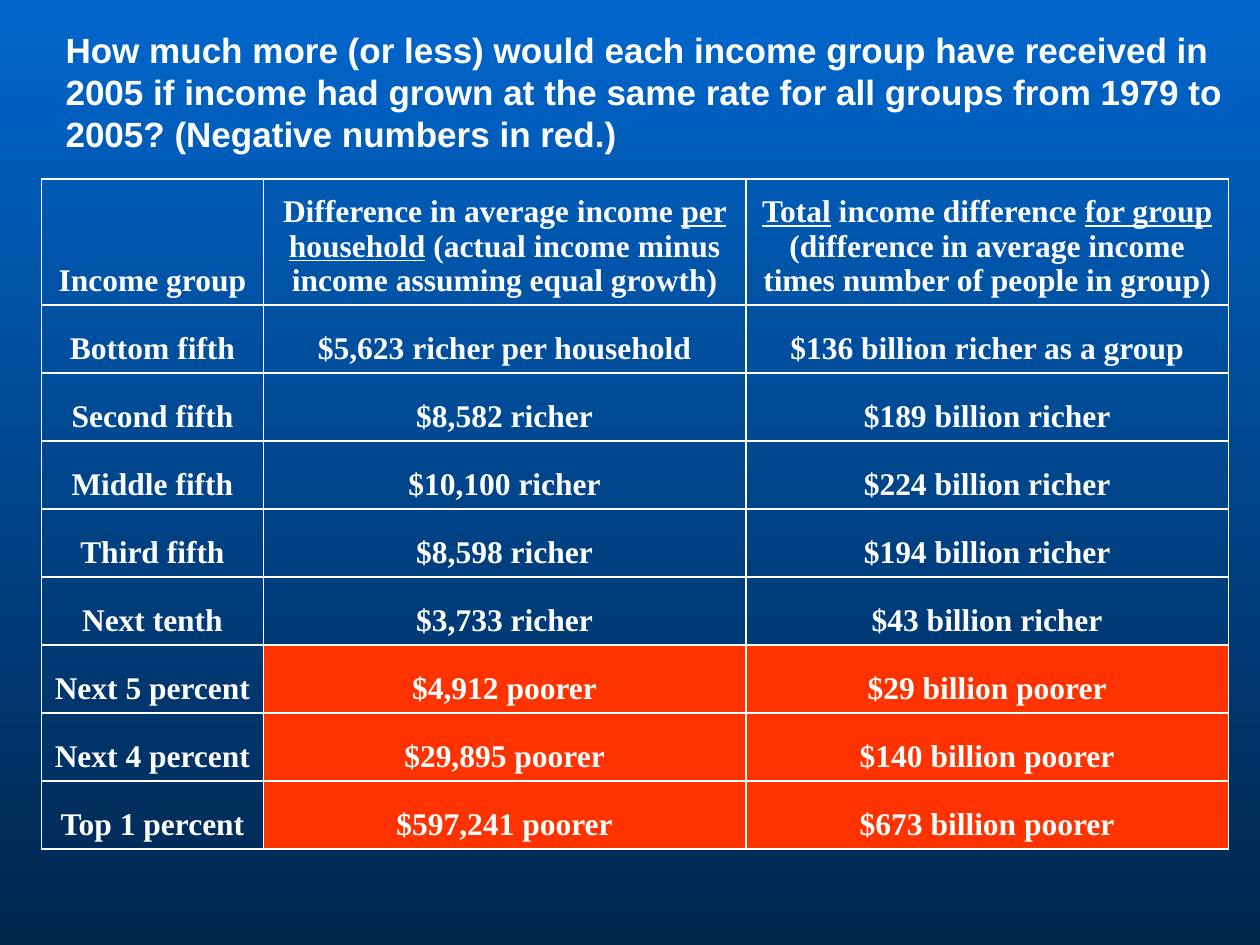
from lxml import etree
from pptx import Presentation
from pptx.dml.color import RGBColor
from pptx.enum.text import MSO_ANCHOR, PP_ALIGN
from pptx.oxml.ns import qn
from pptx.util import Inches, Pt

CENTER, LEFT = PP_ALIGN.CENTER, PP_ALIGN.LEFT
MIDDLE, BOTTOM = MSO_ANCHOR.MIDDLE, MSO_ANCHOR.BOTTOM

WHITE = RGBColor(0xFF, 0xFF, 0xFF)
RED = RGBColor(0xFF, 0x33, 0x00)
SKY = RGBColor(0x00, 0x66, 0xCC)
NAVY = RGBColor(0x00, 0x26, 0x4D)

TITLE_FORMAT = {"name": "Arial", "size": Pt(20), "bold": True}
CELL_FORMAT = {"name": "Times New Roman", "size": Pt(18), "bold": True}

TITLE = (
    "How much more (or less) would each income group have received in 2005 "
    "if income had grown at the same rate for all groups from 1979 to 2005? "
    "(Negative numbers in red.)"
)

# Each header is a list of paragraphs, each a list of (text, underlined) spans.
HEADERS = [
    [[("Income group", False)]],
    [[("Difference in average income ", False), ("per household", True),
      (" (actual income minus income assuming equal growth)", False)]],
    [[("Total", True), (" income difference ", False), ("for group", True)],
     [("(difference in average income times number of people in group)", False)]],
]
ROWS = [
    ("Bottom fifth", "$5,623 richer per household", "$136 billion richer as a group"),
    ("Second fifth", "$8,582 richer", "$189 billion richer"),
    ("Middle fifth", "$10,100 richer", "$224 billion richer"),
    ("Third fifth", "$8,598 richer", "$194 billion richer"),
    ("Next tenth", "$3,733 richer", "$43 billion richer"),
    ("Next 5 percent", "$4,912 poorer", "$29 billion poorer"),
    ("Next 4 percent", "$29,895 poorer", "$140 billion poorer"),
    ("Top 1 percent", "$597,241 poorer", "$673 billion poorer"),
]
COLUMN_WIDTHS = [1.76, 3.83, 3.83]
ROW_HEIGHTS = [1.0] + [0.54] * len(ROWS)


def add_span(para, text, font_format, underline=False):
    span = para.add_run()
    span.text = text
    for name, value in font_format.items():
        setattr(span.font, name, value)
    span.font.color.rgb = WHITE
    if underline:
        span.font.underline = True


def add_borders(cell):
    """Draw a thin white line on all four sides; lines must precede the fill."""
    properties = cell._tc.get_or_add_tcPr()
    for index, side in enumerate(("a:lnL", "a:lnR", "a:lnT", "a:lnB")):
        line = etree.Element(qn(side), w=str(Pt(1)))
        fill = etree.SubElement(line, qn("a:solidFill"))
        etree.SubElement(fill, qn("a:srgbClr"), val=str(WHITE))
        properties.insert(index, line)


deck = Presentation()
deck.slide_width = Inches(10)
deck.slide_height = Inches(7.5)
page = deck.slides.add_slide(deck.slide_layouts[5])

background = page.background.fill
background.gradient()
background.gradient_angle = 270
for stop, color, position in zip(background.gradient_stops, (SKY, NAVY), (0, 1)):
    stop.color.rgb = color
    stop.position = position

title = page.shapes.title
title.left, title.top = Inches(0.42), Inches(0.18)
title.width, title.height = Inches(9.94), Inches(1.1)
title.text_frame.word_wrap = True
title.text_frame.vertical_anchor = MIDDLE
title_para = title.text_frame.paragraphs[0]
title_para.alignment = LEFT
title_para.line_spacing = Pt(24)
add_span(title_para, TITLE, TITLE_FORMAT)

table = page.shapes.add_table(
    len(ROW_HEIGHTS), len(COLUMN_WIDTHS), Inches(0.33), Inches(1.42),
    Inches(sum(COLUMN_WIDTHS)), Inches(sum(ROW_HEIGHTS))).table
table.first_row = False
table.horz_banding = False
for column, width in zip(table.columns, COLUMN_WIDTHS):
    column.width = Inches(width)
for row, height in zip(table.rows, ROW_HEIGHTS):
    row.height = Inches(height)

contents = [HEADERS] + [[[[(text, False)]] for text in row] for row in ROWS]
for row_index, row in enumerate(contents):
    for column_index, paragraphs in enumerate(row):
        cell = table.cell(row_index, column_index)
        cell.vertical_anchor = BOTTOM
        for para_index, spans in enumerate(paragraphs):
            frame = cell.text_frame
            para = frame.add_paragraph() if para_index else frame.paragraphs[0]
            para.alignment = CENTER
            for text, underline in spans:
                add_span(para, text, CELL_FORMAT, underline)
        if cell.text.endswith("poorer"):
            cell.fill.solid()
            cell.fill.fore_color.rgb = RED
        else:
            cell.fill.background()
        add_borders(cell)

deck.save("out.pptx")
